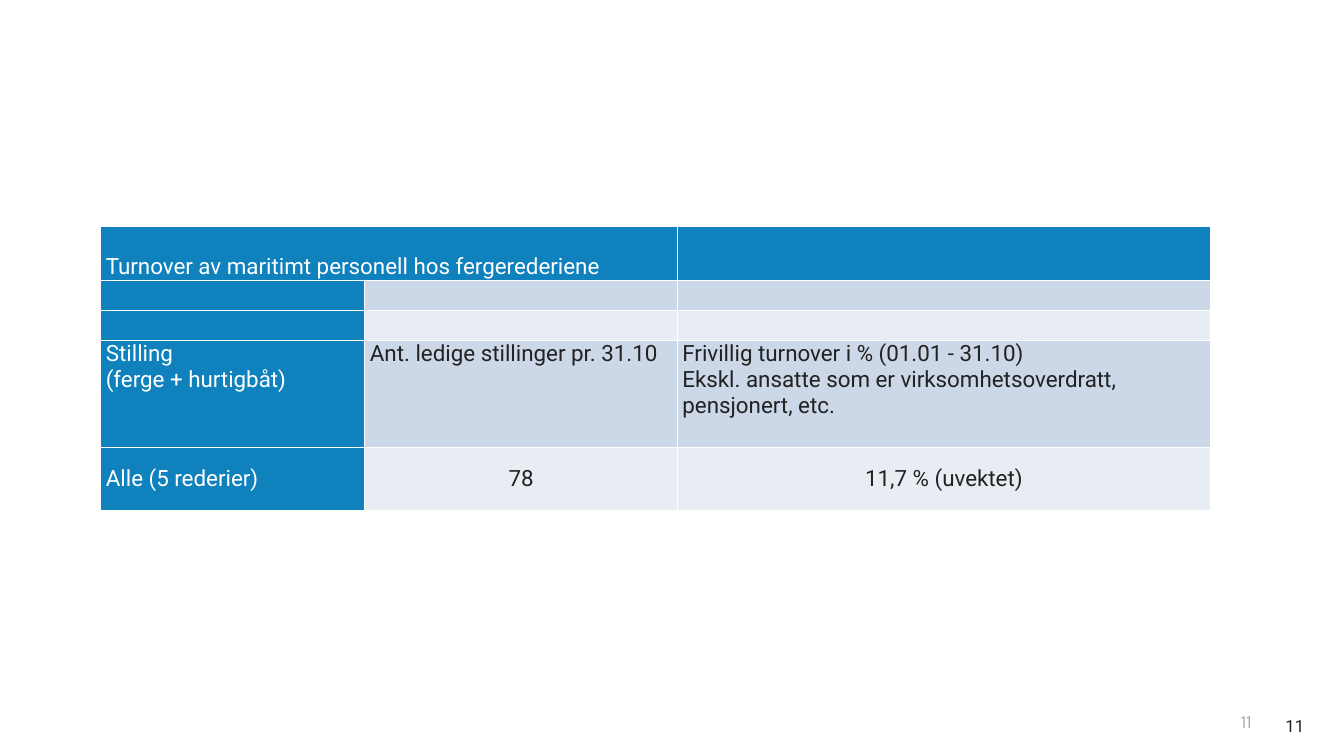
from lxml import etree
from pptx import Presentation
from pptx.dml.color import RGBColor
from pptx.enum.text import MSO_ANCHOR, PP_ALIGN
from pptx.oxml.ns import qn
from pptx.util import Inches, Pt

LEFT, MID, RIGHT = PP_ALIGN.LEFT, PP_ALIGN.CENTER, PP_ALIGN.RIGHT
TOP, HALF, BASE = MSO_ANCHOR.TOP, MSO_ANCHOR.MIDDLE, MSO_ANCHOR.BOTTOM

WHITE = RGBColor(0xFF, 0xFF, 0xFF)
INK = RGBColor(0x22, 0x22, 0x22)
GREY = RGBColor(0xAE, 0xAE, 0xAE)
BLUE = RGBColor(0x0F, 0x81, 0xBC)
DARK = RGBColor(0xCC, 0xD8, 0xE7)
PALE = RGBColor(0xE7, 0xED, 0xF3)

WIDE, HIGH = Inches(13.33), Inches(7.5)
COLS, ROWS = 40, 30

# Table content by row, and the anchor of each row
HEAD = "Turnover av maritimt personell hos fergerederiene"
CELLS = [
    [HEAD, "", ""],
    ["", "", ""],
    ["", "", ""],
    ["Stilling\n(ferge + hurtigbåt)",
     "Ant. ledige stillinger pr. 31.10",
     "Frivillig turnover i % (01.01 - 31.10)\n"
     "Ekskl. ansatte som er virksomhetsoverdratt, pensjonert, etc."],
    ["Alle (5 rederier)", "78", "11,7 % (uvektet)"],
]
ANCHORS = [BASE, TOP, TOP, TOP, HALF]


class Page:
    """A slide on a 40 by 30 grid, with its text style."""

    def __init__(self, deck, face="Roboto", size=16):
        self.slide = deck.slides.add_slide(deck.slide_layouts[6])
        self.face, self.size = face, size

    def across(self, cols):
        return round(WIDE * cols / COLS)

    def down(self, rows):
        return round(HIGH * rows / ROWS)

    def label(self, frame, text, color, align, face=None, size=None):
        para = frame.paragraphs[0]
        para.text = text
        para.alignment = align
        font = para.font
        font.name = face or self.face
        font.size = Pt(size or self.size)
        font.color.rgb = color
        return para

    def number(self, x, y, w, h, text, color, face, size, track=0):
        box = self.slide.shapes.add_textbox(
            self.across(x), self.down(y), self.across(w), self.down(h))
        frame = box.text_frame
        frame.word_wrap = True
        frame.vertical_anchor = HALF
        frame.margin_left = frame.margin_right = 0
        frame.margin_top = frame.margin_bottom = 0
        para = self.label(frame, text, color, RIGHT, face, size)
        if track:
            para.runs[0]._r.get_or_add_rPr().set("spc", str(track))

    def edge(self, cell):
        props = cell._tc.get_or_add_tcPr()
        for side in ("lnL", "lnR", "lnT", "lnB"):
            line = etree.SubElement(props, qn("a:" + side), w=str(Pt(1)))
            fill = etree.SubElement(line, qn("a:solidFill"))
            etree.SubElement(fill, qn("a:srgbClr"), val=str(WHITE))

    def cell(self, cell, text, fill, color, align, anchor):
        self.edge(cell)
        cell.fill.solid()
        cell.fill.fore_color.rgb = fill
        cell.margin_left = cell.margin_right = Inches(0.05)
        cell.margin_top = cell.margin_bottom = 0
        cell.vertical_anchor = anchor
        self.label(cell.text_frame, text, color, align)

    def table(self, x, y, widths, heights):
        grid = self.slide.shapes.add_table(
            len(heights), len(widths), self.across(x), self.down(y),
            self.across(sum(widths)), self.down(sum(heights))).table
        grid.first_row = grid.horz_banding = False
        for col, width in zip(grid.columns, widths):
            col.width = self.across(width)
        for row, height in zip(grid.rows, heights):
            row.height = self.down(height)
        # Blue head row and first column, banded body
        for r, texts in enumerate(CELLS):
            for c, text in enumerate(texts):
                blue = r == 0 or c == 0
                fill = BLUE if blue else DARK if r % 2 else PALE
                align = MID if r == len(CELLS) - 1 and c else LEFT
                self.cell(grid.cell(r, c), text, fill,
                          WHITE if blue else INK, align, ANCHORS[r])
        grid.cell(0, 0).merge(grid.cell(0, 1))


def main():
    deck = Presentation()
    deck.slide_width, deck.slide_height = WIDE, HIGH
    page = Page(deck)

    # Page numbers
    page.number(37.95, 28.4, 0.87, 0.8, "11", INK, "Roboto", 12)
    page.number(28.26, 27.8, 9, 1.6, "11", GREY, "Karla", 13.3, -70)

    # Turnover table
    page.table(3, 9, [7.86, 9.3, 15.87], [2.12, 1.2, 1.2, 4.24, 2.52])

    deck.save("out.pptx")


if __name__ == "__main__":
    main()
